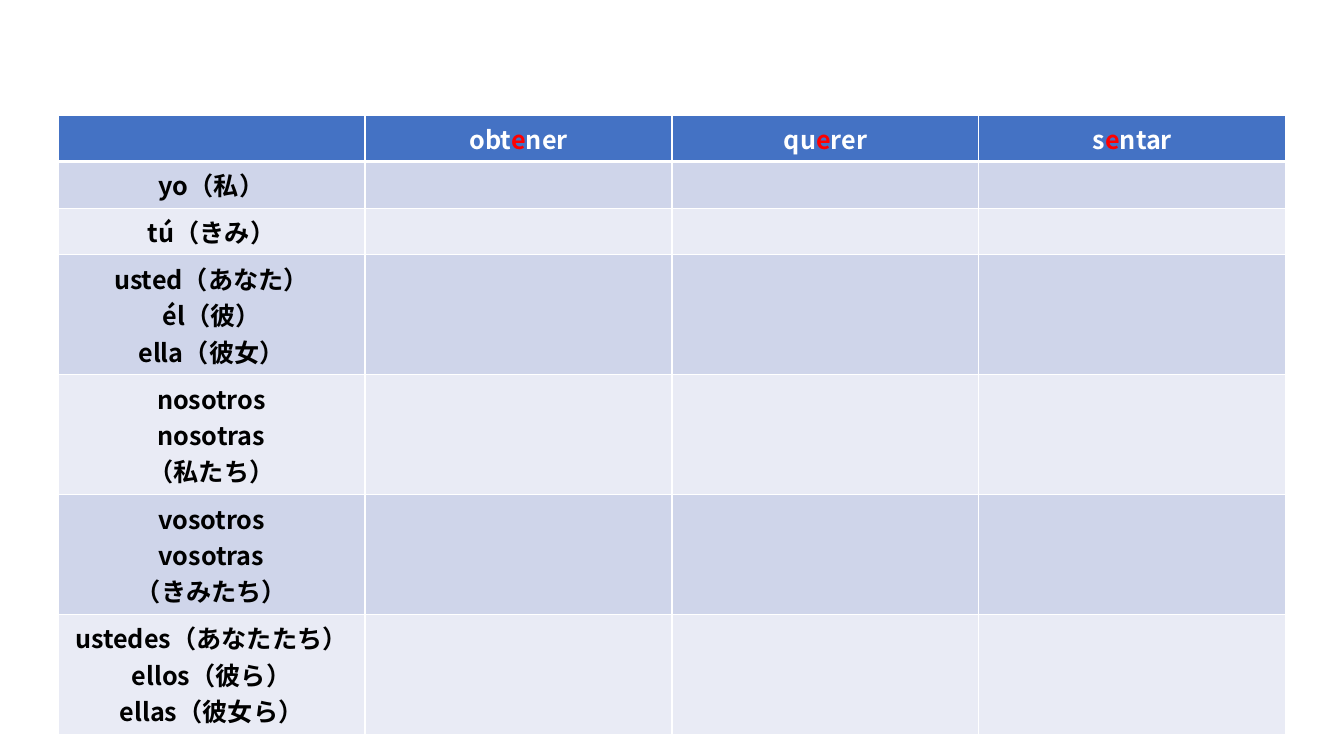
import pptx
import pptx.util
import pptx.dml.color
import pptx.enum.text
import pptx.oxml
import pptx.oxml.ns
from lxml import etree

# Each cell is a list of lines; each line is a list of (text, colour) runs.
VERBS = [("obt", "e", "ner"), ("qu", "e", "rer"), ("s", "e", "ntar")]
PRONOUNS = [
    ["yo（私）"],
    ["tú（きみ）"],
    ["usted（あなた）", "él（彼）", "ella（彼女）"],
    ["nosotros", "nosotras", "（私たち）"],
    ["vosotros", "vosotras", "（きみたち）"],
    ["ustedes（あなたたち）", "ellos（彼ら）", "ellas（彼女ら）"],
]
COLORS = {
    "header": "4472C4", "odd": "CFD5EA", "even": "E9EBF5",
    "white": "FFFFFF", "black": "000000", "stem": "FF0000",
}
FONT = "Noto Sans CJK JP"
FONT_SIZE = 18

PX = 914400 / 100.8
SLIDE_W, SLIDE_H = 1344, 756
LEFT, TOP = 58, 115
COL_W = 307
ROW_H = {1: 46, 3: 120}  # by number of lines


def px(n):
    return pptx.util.Emu(round(n * PX))


def rgb(name):
    return pptx.dml.color.RGBColor.from_string(COLORS[name])


def set_borders(cell, **widths):
    """Draw white cell borders; widths maps L, R, T, B to points."""
    tcPr = cell._tc.get_or_add_tcPr()
    for side in "LRTB":
        ln = etree.SubElement(tcPr, pptx.oxml.ns.qn("a:ln" + side),
                              w=str(pptx.util.Pt(widths.get(side, 1))))
        fill = etree.SubElement(ln, pptx.oxml.ns.qn("a:solidFill"))
        etree.SubElement(fill, pptx.oxml.ns.qn("a:srgbClr"), val=COLORS["white"])


def add_lines(cell, lines):
    tf = cell.text_frame
    for i, runs in enumerate(lines):
        p = tf.add_paragraph() if i else tf.paragraphs[0]
        p.alignment = pptx.enum.text.PP_ALIGN.CENTER
        for text, color in runs:
            r = p.add_run()
            r.text = text
            r.font.name = FONT
            r.font.size = pptx.util.Pt(FONT_SIZE)
            r.font.bold = True
            r.font.color.rgb = rgb(color)
            etree.SubElement(r._r.get_or_add_rPr(), pptx.oxml.ns.qn("a:ea"), typeface=FONT)


def main():
    header = [[]] + [[list(zip(verb, ("white", "stem", "white")))] for verb in VERBS]
    body = [[[[(line, "black")] for line in lines]] + [[]] * len(VERBS)
            for lines in PRONOUNS]
    rows = [header] + body
    heights = [ROW_H[1]] + [ROW_H[len(lines)] for lines in PRONOUNS]

    prs = pptx.Presentation()
    prs.slide_width, prs.slide_height = px(SLIDE_W), px(SLIDE_H)
    s = prs.slides.add_slide(prs.slide_layouts[6])
    table = s.shapes.add_table(len(rows), len(header), px(LEFT), px(TOP),
                               px(COL_W * len(header)), px(sum(heights))).table
    for col in table.columns:
        col.width = px(COL_W)

    for i, (row, height) in enumerate(zip(rows, heights)):
        table.rows[i].height = px(height)
        fill = "header" if i == 0 else "odd" if i % 2 else "even"
        for j, lines in enumerate(row):
            cell = table.cell(i, j)
            set_borders(cell, T=3 if i == 1 else 1, B=3 if i == 0 else 1)
            cell.fill.solid()
            cell.fill.fore_color.rgb = rgb(fill)
            add_lines(cell, lines)

    prs.save("out.pptx")


if __name__ == "__main__":
    main()
